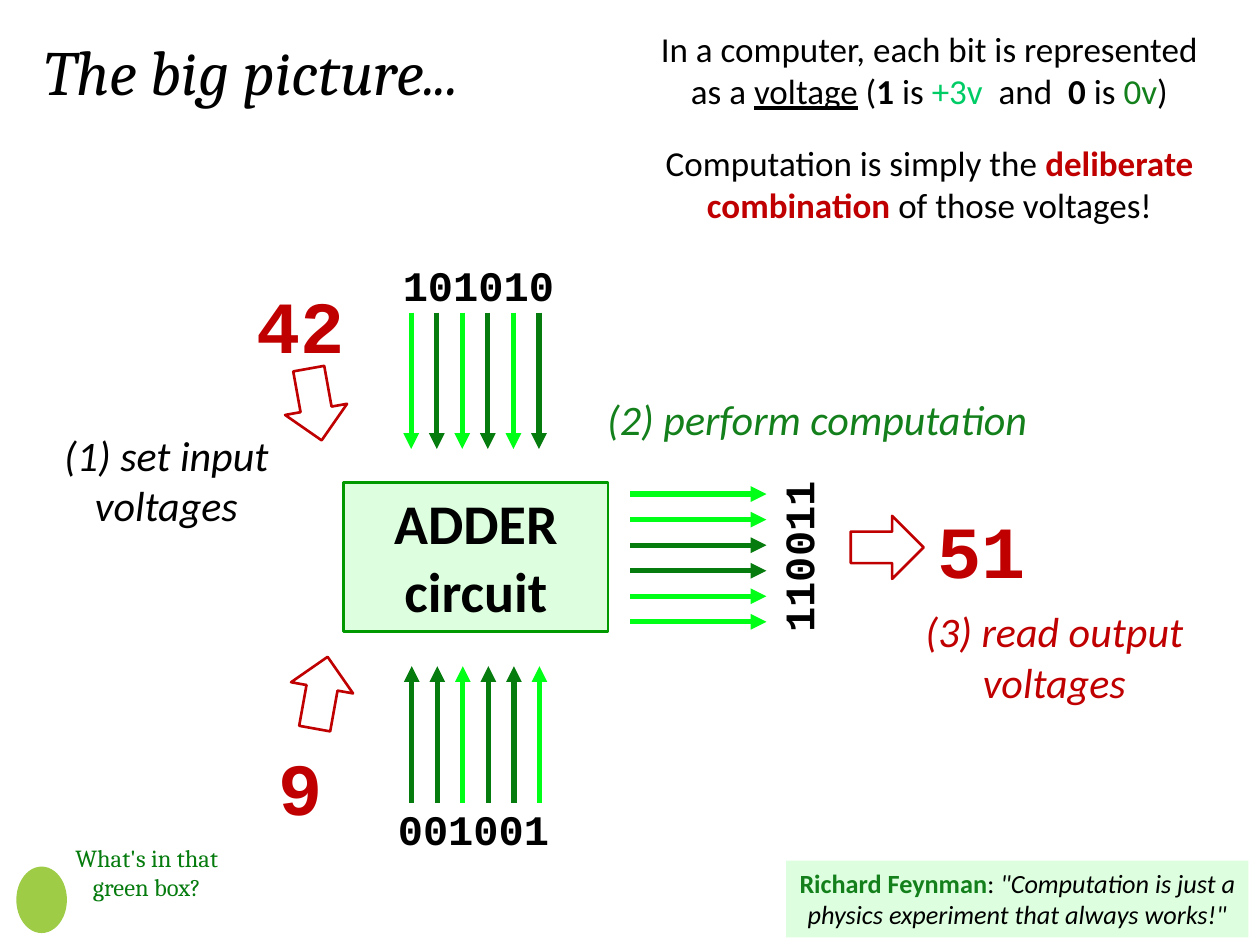
from lxml import etree
from pptx import Presentation
from pptx.dml.color import RGBColor
from pptx.enum.shapes import MSO_CONNECTOR, MSO_SHAPE
from pptx.enum.text import MSO_ANCHOR, MSO_AUTO_SIZE, PP_ALIGN
from pptx.oxml.ns import qn
from pptx.util import Cm, Pt

LEFT, CENTER, RIGHT = PP_ALIGN.LEFT, PP_ALIGN.CENTER, PP_ALIGN.RIGHT
TOP, MIDDLE = MSO_ANCHOR.TOP, MSO_ANCHOR.MIDDLE
RECTANGLE, OVAL = MSO_SHAPE.RECTANGLE, MSO_SHAPE.OVAL
DOWN, UP, ONWARD = MSO_SHAPE.DOWN_ARROW, MSO_SHAPE.UP_ARROW, MSO_SHAPE.RIGHT_ARROW
STRAIGHT = MSO_CONNECTOR.STRAIGHT

SANS, SERIF, MONO = "Calibri", "Cambria", "Courier New"
COLORS = {
    "black": "000000", "red": "C00000", "green": "13801C", "mint": "00CC66",
    "high": "00FF16", "low": "067B0E", "pale": "DDFFDF", "border": "009900",
    "lime": "9ECC46",
}
WIRE_GAP = 0.515
WIRE_LENGTH = 2.75


def color(name):
    return RGBColor.from_string(COLORS[name])


def format_text(shape, runs, size=24, font=SANS, ink="black", bold=False,
                italic=False, align=CENTER, anchor=TOP, wrap=True):
    """Fill a shape with one paragraph; runs is a string or (text, format) pairs."""
    frame = shape.text_frame
    frame.word_wrap = wrap
    frame.auto_size = MSO_AUTO_SIZE.NONE
    frame.vertical_anchor = anchor
    paragraph = frame.paragraphs[0]
    paragraph.alignment = align
    for text, changes in [(runs, {})] if isinstance(runs, str) else runs:
        run = paragraph.add_run()
        run.text = text
        run.font.name = font
        run.font.size = Pt(size)
        run.font.bold = changes.get("bold", bold)
        run.font.italic = changes.get("italic", italic)
        run.font.underline = changes.get("underline", False)
        run.font.color.rgb = color(changes.get("ink", ink))


def add_text(slide, box, runs, rotation=0, **text_format):
    shape = slide.shapes.add_textbox(*map(Cm, box))
    shape.rotation = rotation
    format_text(shape, runs, **text_format)


def add_shape(slide, kind, box, fill=None, line=None, rotation=0):
    shape = slide.shapes.add_shape(kind, *map(Cm, box))
    shape.shadow.inherit = False
    shape.rotation = rotation
    if fill:
        shape.fill.solid()
        shape.fill.fore_color.rgb = color(fill)
    else:
        shape.fill.background()
    if line:
        shape.line.color.rgb = color(line)
        shape.line.width = Pt(1.5)
    else:
        shape.line.fill.background()
    return shape


def add_wires(slide, bits, start, run, step):
    """Draw one arrow per bit, bright for 1 and dark for 0."""
    for index, bit in enumerate(bits):
        x, y = (origin + index * gap for origin, gap in zip(start, step))
        wire = slide.shapes.add_connector(
            STRAIGHT, Cm(x), Cm(y), Cm(x + run[0]), Cm(y + run[1]))
        wire.line.color.rgb = color("high" if bit == "1" else "low")
        wire.line.width = Pt(3)
        etree.SubElement(wire.line._get_or_add_ln(), qn("a:tailEnd"), type="triangle")
        etree.SubElement(wire._element.spPr, qn("a:effectLst"))


def add_number(slide, box, number, align):
    add_text(slide, box, number, size=42, font=MONO, ink="red", bold=True,
             align=align, anchor=MIDDLE)


def add_bits(slide, box, bits, rotation=0, align=LEFT):
    add_text(slide, box, bits, rotation=rotation, font=MONO, bold=True,
             align=align, anchor=MIDDLE)


def add_title(slide, box, text):
    title = slide.shapes.title
    title.left, title.top, title.width, title.height = map(Cm, box)
    format_text(title, text, size=36, font=SERIF, italic=True, align=LEFT)


def add_introduction(slide, left, top):
    add_text(slide, (left + 0.3, top, 11.53, 1.96), [
        ("In a computer, each bit is represented as a ", {}),
        ("voltage", {"underline": True}),
        (" (", {}),
        ("1", {"bold": True}),
        (" is ", {}),
        ("+3v  ", {"ink": "mint"}),
        ("and  ", {}),
        ("0", {"bold": True}),
        (" is ", {}),
        ("0v", {"ink": "green"}),
        (")", {}),
    ], size=20)
    add_text(slide, (left, top + 2.29, 12.14, 1.96), [
        ("Computation is simply the ", {}),
        ("deliberate combination ", {"ink": "red", "bold": True}),
        ("of those voltages!", {}),
    ], size=20)


def add_input(slide, left, top, number, bits, number_at, bits_at, block_at, wires_at,
              downward):
    """Place a number, its bits and the wires leading to the adder."""
    def place(offset, *size):
        return (left + offset[0], top + offset[1], *size)

    add_number(slide, place(number_at, 2.74, 2.06), number, RIGHT)
    add_bits(slide, place(bits_at, 5.08, 1.27), bits)
    add_wires(slide, bits, place(wires_at),
              (0, WIRE_LENGTH if downward else -WIRE_LENGTH), (WIRE_GAP, 0))
    add_shape(slide, DOWN if downward else UP, place(block_at, 1.27, 1.47),
              line="red", rotation=-10.2 if downward else 10.2)


def add_adder(slide, box):
    adder = add_shape(slide, RECTANGLE, box, fill="pale", line="border")
    format_text(adder, "ADDER circuit", size=32, bold=True)


def add_output(slide, left, top, number, bits):
    add_wires(slide, bits, (left, top), (WIRE_LENGTH, 0), (0, WIRE_GAP))
    add_bits(slide, (left + 0.84, top + 0.63, 5.08, 1.27), bits,
             rotation=270, align=CENTER)
    add_shape(slide, ONWARD, (left + 4.45, top + 0.44, 1.47, 1.27), line="red")
    add_number(slide, (left + 5.72, top + 0.07, 2.74, 2.06), number, CENTER)


def add_step_captions(slide):
    for text, box, ink, wrap in (
        ("(1) set input voltages", (0.74, 8.53, 5.23, 2.31), "black", True),
        ("(2) perform computation", (11.94, 7.8, 9.07, 1.27), "green", False),
        ("(3) read output voltages", (17.93, 12.09, 6.65, 2.31), "red", True),
    ):
        add_text(slide, box, text, ink=ink, italic=True, wrap=wrap)


def add_question(slide, left, top):
    add_shape(slide, OVAL, (left, top + 0.6, 1.02, 1.34), fill="lime")
    add_text(slide, (left + 0.74, top, 3.78, 1.45), "What's in that green box?",
             size=14, font=SERIF, ink="low")


def add_quote(slide, box):
    quote = add_shape(slide, RECTANGLE, box, fill="pale")
    format_text(quote, [
        ("Richard Feynman", {"ink": "green", "bold": True}),
        (": ", {}),
        ('"Computation is just a physics experiment that always works!"',
         {"italic": True}),
    ], size=15)


def main():
    presentation = Presentation()
    presentation.slide_width, presentation.slide_height = Cm(25.4), Cm(19.05)
    slide = presentation.slides.add_slide(presentation.slide_layouts[5])

    # Heading and explanation
    add_title(slide, (0.64, 0.53, 20.12, 1.8), "The big picture...")
    add_introduction(slide, 12.67, 0.43)

    # Inputs above and below the adder
    add_input(slide, 4.45, 5.11, "42", "101010", number_at=(0, 0.4),
              bits_at=(3.42, 0), block_at=(1.27, 2.31), wires_at=(3.84, 1.19),
              downward=True)
    add_input(slide, 4.01, 13.23, "9", "001001", number_at=(0, 1.58),
              bits_at=(3.76, 2.85), block_at=(1.83, 0), wires_at=(4.29, 2.95),
              downward=False)

    # Adder and its output
    add_adder(slide, (6.93, 9.73, 5.33, 3))
    add_output(slide, 12.7, 9.96, "51", "110011")
    add_step_captions(slide)

    # Foot of the slide
    add_question(slide, 0.33, 16.87)
    add_quote(slide, (15.85, 17.35, 9.32, 1.55))

    presentation.save("out.pptx")


if __name__ == "__main__":
    main()
